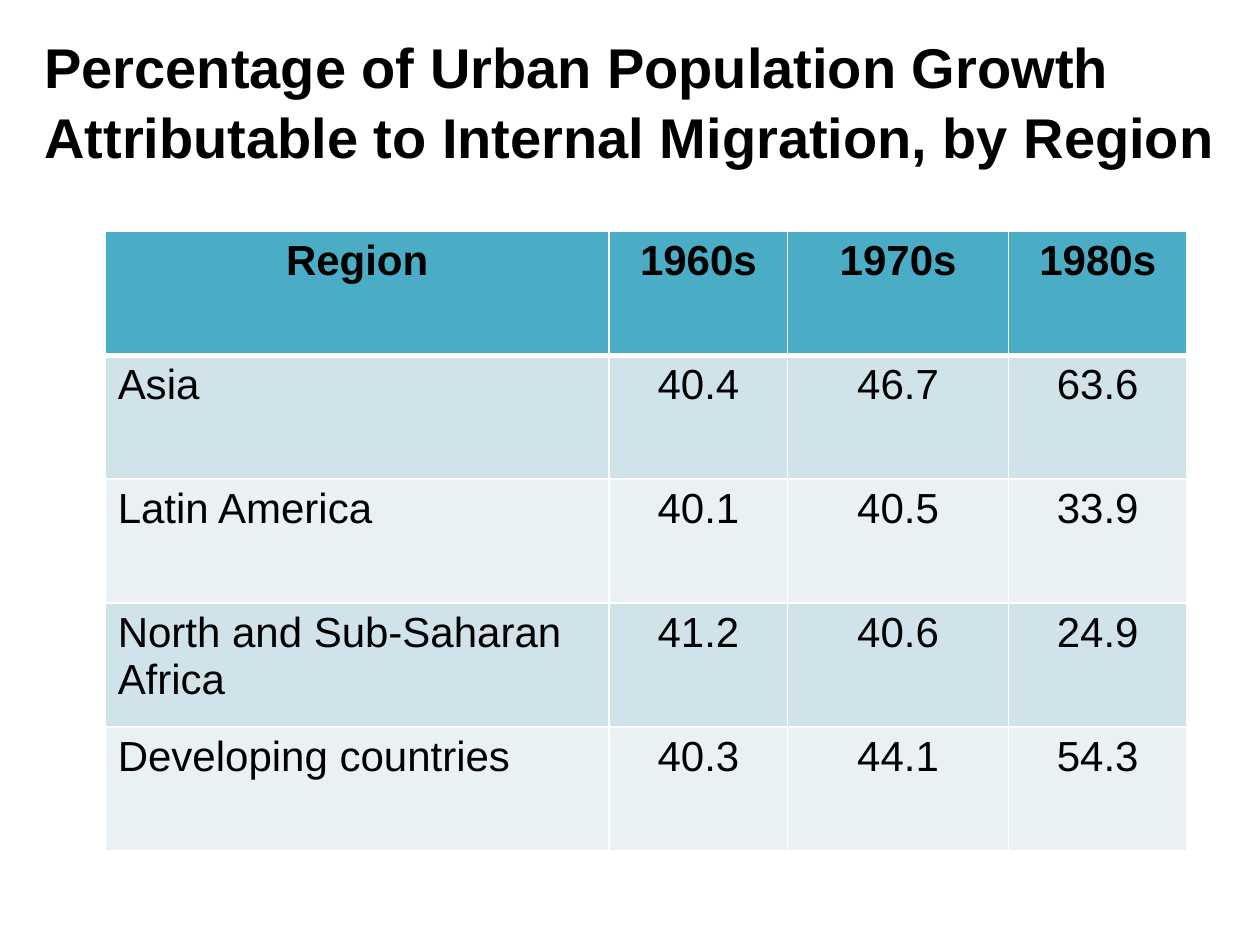
"""Build a slide with a table of urban growth due to internal migration."""
from lxml.etree import SubElement
from pptx import Presentation
from pptx.dml.color import RGBColor
from pptx.enum.text import MSO_ANCHOR as Anchor, MSO_AUTO_SIZE as AutoSize, PP_ALIGN as Align
from pptx.oxml.ns import qn
from pptx.util import Cm, Pt

BLACK = RGBColor(0x00, 0x00, 0x00)
WHITE = RGBColor(0xFF, 0xFF, 0xFF)
TEAL = RGBColor(0x4B, 0xAC, 0xC6)
BAND_DARK = RGBColor(0xD0, 0xE3, 0xEA)
BAND_LIGHT = RGBColor(0xE9, 0xF1, 0xF5)

FONT = "Arial"
TITLE = "Percentage of Urban Population Growth Attributable to Internal Migration, by Region"
ROWS = [
    ("Region", "1960s", "1970s", "1980s"),
    ("Asia", "40.4", "46.7", "63.6"),
    ("Latin America", "40.1", "40.5", "33.9"),
    ("North and Sub-Saharan Africa", "41.2", "40.6", "24.9"),
    ("Developing countries", "40.3", "44.1", "54.3"),
]
COLUMN_WIDTHS = [Cm(10.16), Cm(3.6), Cm(4.45), Cm(3.6)]
ROW_HEIGHT = Cm(2.5)


def add_text(paragraph, text, size, bold, alignment):
    paragraph.alignment = alignment
    run = paragraph.add_run()
    run.text = text
    font = run.font
    font.name, font.size, font.bold = FONT, Pt(size), bold
    font.color.rgb = BLACK


def add_title(slide):
    title = slide.shapes.title
    title.left, title.top, title.width, title.height = Cm(0.64), Cm(0.43), Cm(24.33), Cm(3.18)
    frame = title.text_frame
    frame.word_wrap = True
    frame.auto_size = AutoSize.NONE
    frame.vertical_anchor = Anchor.MIDDLE
    paragraph = frame.paragraphs[0]
    paragraph.line_spacing = 1.04
    add_text(paragraph, TITLE, 32, True, Align.LEFT)


def set_borders(cell, widths):
    properties = cell._tc.get_or_add_tcPr()
    for side, width in widths.items():
        line = SubElement(properties, qn(f"a:ln{side}"), w=str(Pt(width)))
        fill = SubElement(line, qn("a:solidFill"))
        SubElement(fill, qn("a:srgbClr"), val=str(WHITE))


def format_cell(cell, text, row, column):
    header = row == 0
    set_borders(cell, {"L": 1, "R": 1, "T": 3 if row == 1 else 1, "B": 3 if header else 1})
    cell.fill.solid()
    cell.fill.fore_color.rgb = TEAL if header else BAND_DARK if row % 2 else BAND_LIGHT
    alignment = Align.CENTER if header or column else Align.LEFT
    add_text(cell.text_frame.paragraphs[0], text, 24, header, alignment)


def add_migration_table(slide):
    frame = slide.shapes.add_table(
        len(ROWS), len(COLUMN_WIDTHS), Cm(2.12), Cm(4.66),
        sum(COLUMN_WIDTHS), ROW_HEIGHT * len(ROWS))
    table = frame.table
    for column, width in zip(table.columns, COLUMN_WIDTHS):
        column.width = width
    for row, texts in enumerate(ROWS):
        table.rows[row].height = ROW_HEIGHT
        for column, text in enumerate(texts):
            format_cell(table.cell(row, column), text, row, column)


def main():
    presentation = Presentation()
    presentation.slide_width, presentation.slide_height = Cm(25.4), Cm(19.05)
    slide = presentation.slides.add_slide(presentation.slide_layouts[5])
    add_title(slide)
    add_migration_table(slide)
    presentation.save("out.pptx")


if __name__ == "__main__":
    main()
